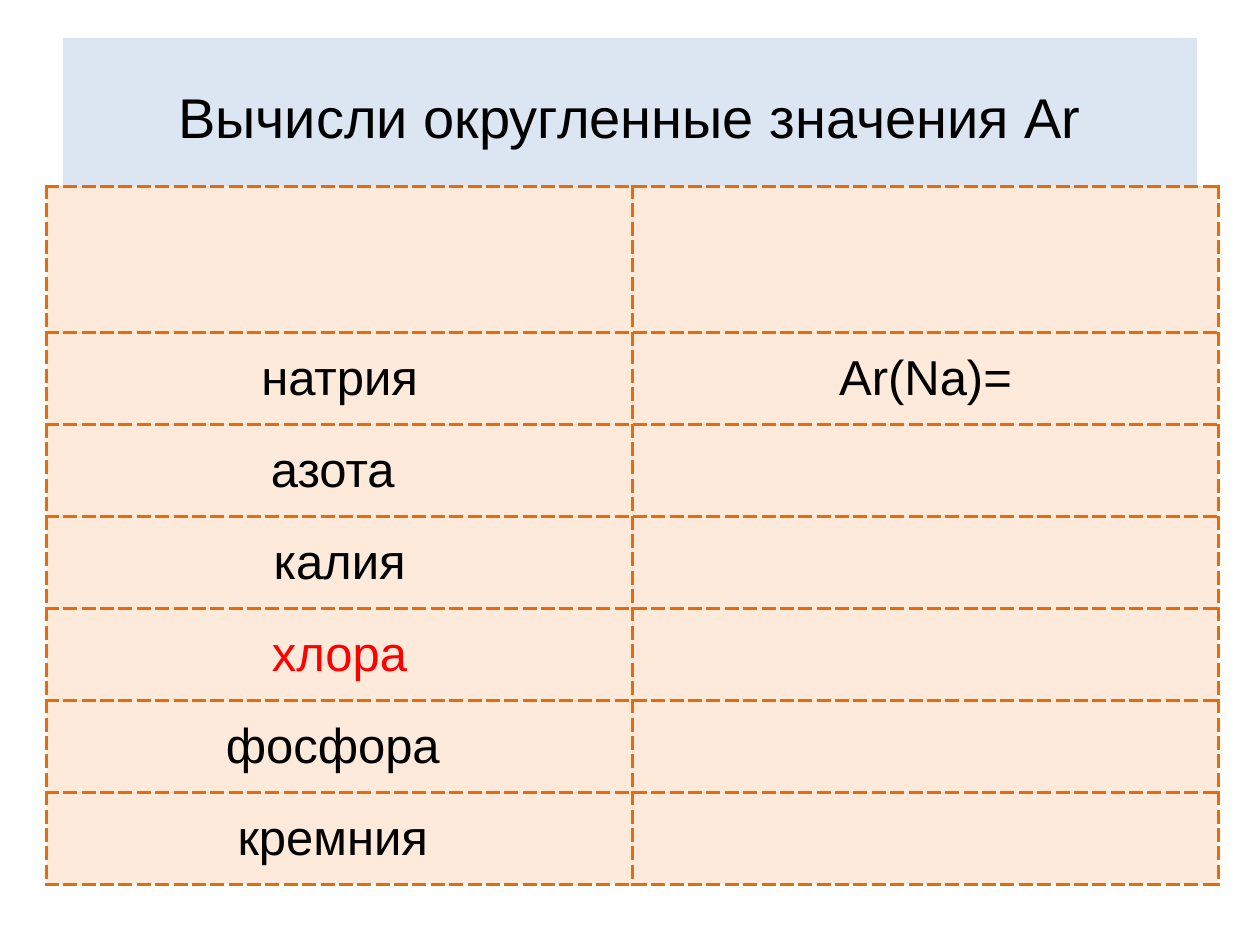
from lxml import etree
from pptx import Presentation
from pptx.dml.color import RGBColor
from pptx.enum.shapes import MSO_SHAPE
from pptx.enum.text import MSO_ANCHOR, PP_ALIGN
from pptx.oxml.ns import qn
from pptx.util import Inches, Pt

RECTANGLE = MSO_SHAPE.RECTANGLE
MIDDLE = MSO_ANCHOR.MIDDLE
CENTER = PP_ALIGN.CENTER

BLACK = RGBColor(0x00, 0x00, 0x00)
RED = RGBColor(0xFF, 0x00, 0x00)
PALE_BLUE = RGBColor(0xDC, 0xE6, 0xF2)
PALE_ORANGE = RGBColor(0xFD, 0xEA, 0xDA)
ORANGE = RGBColor(0xE4, 0x6C, 0x0A)

ELEMENTS = [
    ("натрия", "Ar(Na)=", BLACK),
    ("азота ", "", BLACK),
    ("калия", "", BLACK),
    ("хлора", "", RED),
    ("фосфора ", "", BLACK),
    ("кремния ", "", BLACK),
]
HEADER_HEIGHT = Inches(1.16)
ROW_HEIGHT = Inches(0.73)
COLUMN_WIDTH = Inches(4.65)


def write_centered(frame, text, size, color):
    paragraph = frame.paragraphs[0]
    paragraph.alignment = CENTER
    run = paragraph.add_run()
    run.text = text
    run.font.color.rgb = color
    for name, value in {"name": "Arial", "size": Pt(size), "bold": False}.items():
        setattr(run.font, name, value)


def add_dashed_borders(cell):
    properties = cell._tc.get_or_add_tcPr()
    for position, side in enumerate(("lnL", "lnR", "lnT", "lnB")):
        border = etree.Element(qn(f"a:{side}"), w=str(Pt(2.25)))
        fill = etree.SubElement(border, qn("a:solidFill"))
        etree.SubElement(fill, qn("a:srgbClr"), val=str(ORANGE))
        etree.SubElement(border, qn("a:prstDash"), val="dash")
        properties.insert(position, border)


prs = Presentation()
prs.slide_width, prs.slide_height = Inches(10), Inches(7.5)
slide = prs.slides.add_slide(prs.slide_layouts[6])

# Title band
margin = int(prs.slide_width * 0.05)
title = slide.shapes.add_shape(
    RECTANGLE, margin, int(prs.slide_height * 0.04),
    prs.slide_width - 2 * margin, Inches(1.25))
title.shadow.inherit = False
title.fill.solid()
title.fill.fore_color.rgb = PALE_BLUE
title.line.fill.background()
title.text_frame.word_wrap = True
title.text_frame.vertical_anchor = MIDDLE
write_centered(title.text_frame, "Вычисли округленные значения Ar", 32, BLACK)

# Table of elements and their relative atomic masses
masses = slide.shapes.add_table(
    len(ELEMENTS) + 1, 2, Inches(0.37), Inches(1.48),
    2 * COLUMN_WIDTH, HEADER_HEIGHT + len(ELEMENTS) * ROW_HEIGHT).table
for flag, value in {"first_row": False, "horz_banding": False}.items():
    setattr(masses, flag, value)
for column in masses.columns:
    column.width = COLUMN_WIDTH
for index, row in enumerate(masses.rows):
    row.height = ROW_HEIGHT if index else HEADER_HEIGHT

for cell in masses.iter_cells():
    cell.fill.solid()
    cell.fill.fore_color.rgb = PALE_ORANGE
    cell.vertical_anchor = MIDDLE
    add_dashed_borders(cell)

for row, (element, mass, color) in enumerate(ELEMENTS, start=1):
    for column, text in enumerate((element, mass)):
        if text:
            write_centered(masses.cell(row, column).text_frame, text, 28, color)

prs.save("out.pptx")
